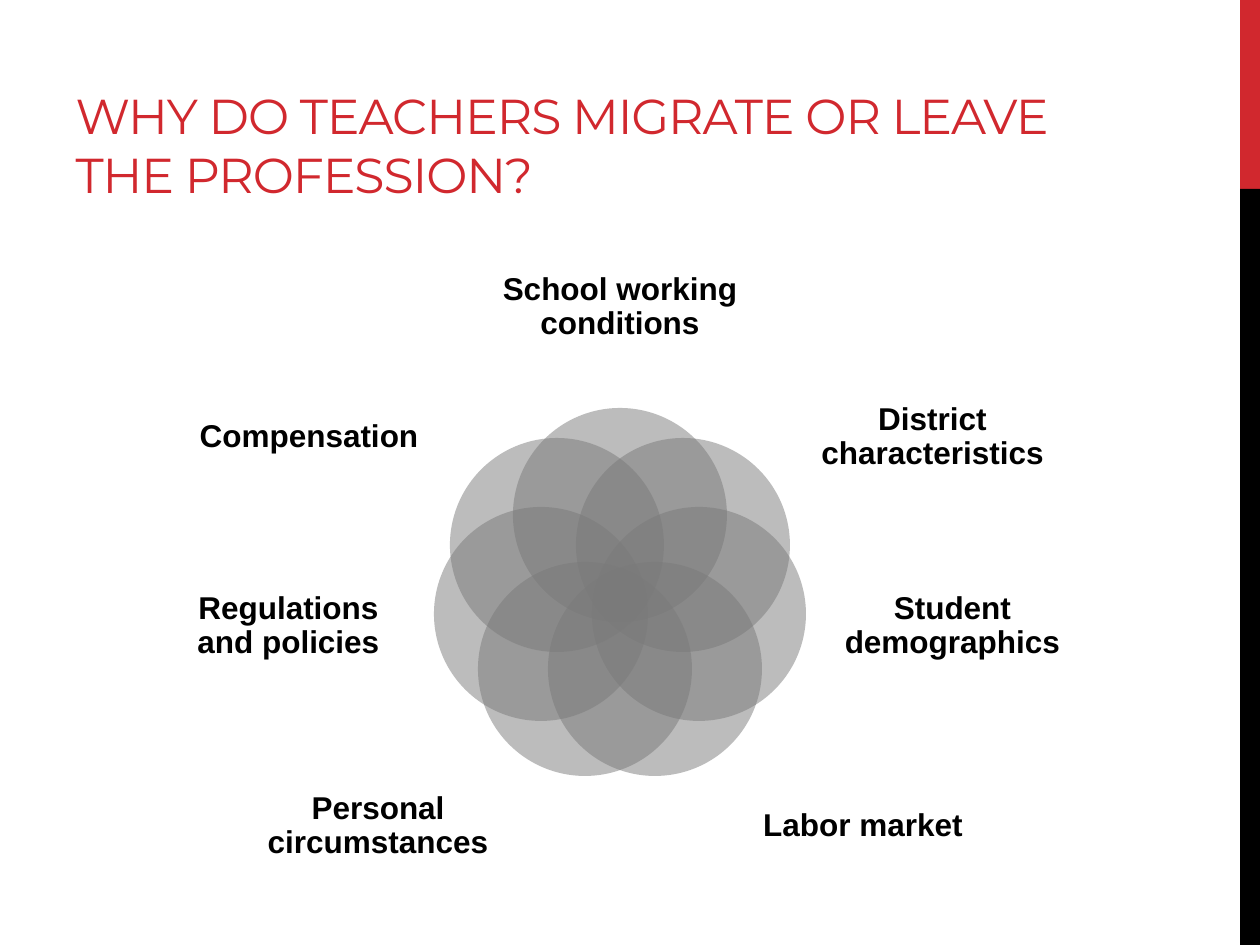
"""Build a slide with a seven-circle Venn of reasons teachers migrate or leave."""
from math import cos, pi, sin

from lxml import etree
from pptx import Presentation
from pptx.dml.color import RGBColor
from pptx.enum.shapes import MSO_SHAPE
from pptx.enum.text import MSO_ANCHOR, MSO_AUTO_SIZE, PP_ALIGN
from pptx.oxml.ns import qn
from pptx.util import Pt

RECTANGLE, OVAL = MSO_SHAPE.RECTANGLE, MSO_SHAPE.OVAL
MIDDLE, BOTTOM = MSO_ANCHOR.MIDDLE, MSO_ANCHOR.BOTTOM
LEFT, CENTER = PP_ALIGN.LEFT, PP_ALIGN.CENTER
NO_AUTOFIT = MSO_AUTO_SIZE.NONE
RED = RGBColor(0xD1, 0x28, 0x2E)
BLACK = RGBColor(0x00, 0x00, 0x00)
GRAY = RGBColor(0x7A, 0x7A, 0x7A)
EMU_PER_PX = 914400 / 126


def px(*lengths):
    return [round(length * EMU_PER_PX) for length in lengths]


def add_filled(shapes, preset, box, color):
    shape = shapes.add_shape(preset, *px(*box))
    shape.shadow.inherit = False
    shape.fill.solid()
    shape.fill.fore_color.rgb = color
    shape.line.fill.background()
    return shape


prs = Presentation()
prs.slide_width, prs.slide_height = px(1260, 945)
slide = prs.slides.add_slide(prs.slide_layouts[5])

add_filled(slide.shapes, RECTANGLE, (1240, 0, 20, 189), RED)
add_filled(slide.shapes, RECTANGLE, (1240, 189, 20, 756), BLACK)

title = slide.shapes.title
title.left, title.top, title.width, title.height = px(63, 21, 1050, 189)
heading = title.text_frame
heading.text = "WHY DO TEACHERS MIGRATE OR LEAVE THE PROFESSION?"
heading.auto_size = NO_AUTOFIT
heading.word_wrap = True
heading.vertical_anchor = BOTTOM
heading.paragraphs[0].alignment = LEFT
heading_run = heading.paragraphs[0].runs[0]
heading_run.font.name = "Montserrat"
heading_run.font.size = Pt(28)
heading_run.font.color.rgb = RED
heading_run.font._element.set("spc", "-60")

REASONS = [
    ("School working conditions", (498, 242, 244, 131)),
    ("District characteristics", (795, 365, 275, 144)),
    ("Student demographics", (839, 549, 227, 154)),
    ("Labor market", (741, 756, 244, 141)),
    ("Personal circumstances", (256, 756, 244, 141)),
    ("Regulations and policies", (175, 549, 227, 154)),
    ("Compensation", (193, 365, 232, 144)),
]
CENTER_X, CENTER_Y, RING_RADIUS, DIAMETER = 620, 596, 81, 214

venn = slide.shapes.add_group_shape()
for index, (reason, label_box) in enumerate(REASONS):
    angle = 2 * pi * index / len(REASONS)
    left = round(CENTER_X + RING_RADIUS * sin(angle) - DIAMETER / 2)
    top = round(CENTER_Y - RING_RADIUS * cos(angle) - DIAMETER / 2)
    circle = add_filled(venn.shapes, OVAL, (left, top, DIAMETER, DIAMETER), GRAY)
    circle_color = circle._element.spPr.find(qn("a:solidFill"))[0]
    etree.SubElement(circle_color, qn("a:alpha"), val="50000")

    label = venn.shapes.add_textbox(*px(*label_box)).text_frame
    label.text = reason
    label.word_wrap = True
    label.vertical_anchor = MIDDLE
    label.margin_left = label.margin_right = label.margin_top = label.margin_bottom = 0
    line = label.paragraphs[0]
    line.alignment = CENTER
    line.line_spacing = 0.9
    font = line.runs[0].font
    font.name = "Arial"
    font.size = Pt(18)
    font.bold = True
    font.color.rgb = BLACK

prs.save("out.pptx")
